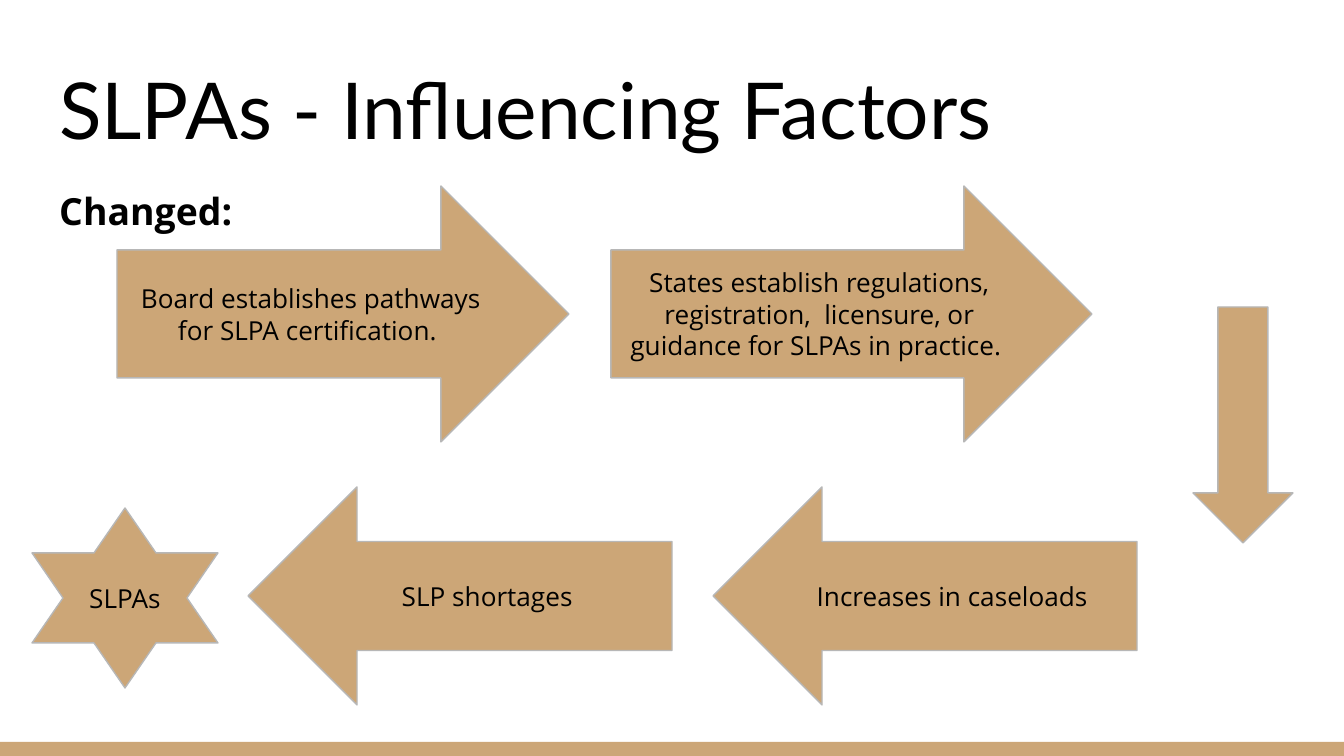
from dataclasses import dataclass

from pptx import Presentation
from pptx import util as u
from pptx.dml.color import RGBColor
from pptx.enum import shapes, text

SCALE = 914400 / 134.4
KIND = shapes.MSO_SHAPE


@dataclass(frozen=True)
class Theme:
    """Colours, fonts and type sizes of the slide."""
    tan: RGBColor = RGBColor.from_string("CCA677")
    edge: RGBColor = RGBColor.from_string("B7B7B7")
    ink: RGBColor = RGBColor.from_string("000000")
    head: str = "Lato"
    body: str = "Open Sans"
    title: int = 42
    lead: int = 20
    label: int = 14


THEME = Theme()


def px(*vals):
    """Turn px lengths into EMU."""
    return [u.Emu(round(v * SCALE)) for v in vals]


def write(shape, words, font, size, anchor, align, bold=False):
    """Set the words of a shape and return its paragraph."""
    frame = shape.text_frame
    frame.word_wrap = True
    frame.vertical_anchor = anchor
    frame.margin_left = frame.margin_right = u.Inches(0.1)
    frame.margin_top = frame.margin_bottom = u.Inches(0.1)
    frame.text = words
    para = frame.paragraphs[0]
    para.alignment = align
    for run in para.runs:
        run.font.name = font
        run.font.size = u.Pt(size)
        run.font.bold = bold
        run.font.color.rgb = THEME.ink
    return para


def add_text(slide, box, words, font, size, anchor, bold=False):
    """Add a left-aligned text box and return its paragraph."""
    shape = slide.shapes.add_textbox(*px(*box))
    return write(shape, words, font, size, anchor, text.PP_ALIGN.LEFT, bold)


def add_form(slide, kind, box, words="", edged=True):
    """Add a tan shape, with a centred label if there are words."""
    shape = slide.shapes.add_shape(kind, *px(*box))
    shape.shadow.inherit = False
    shape.fill.solid()
    shape.fill.fore_color.rgb = THEME.tan
    if edged:
        shape.line.color.rgb = THEME.edge
        shape.line.width = u.Pt(0.75)
    else:
        shape.line.fill.background()
    if words:
        write(shape, words, THEME.body, THEME.label,
              text.MSO_ANCHOR.MIDDLE, text.PP_ALIGN.CENTER)


def main():
    """Build the slide and save it."""
    deck = Presentation()
    deck.slide_width, deck.slide_height = px(1344, 756)
    slide = deck.slides.add_slide(deck.slide_layouts[6])

    add_form(slide, KIND.RECTANGLE, (0, 742, 1344, 14), edged=False)
    add_text(slide, (46, 47, 1252, 122), "SLPAs - Influencing Factors",
             THEME.head, THEME.title, text.MSO_ANCHOR.BOTTOM)
    lead = add_text(slide, (46, 168, 1252, 536), "Changed:",
                    THEME.body, THEME.lead, text.MSO_ANCHOR.TOP, bold=True)
    lead.line_spacing = 1.15
    lead.space_after = u.Pt(12)

    steps = [
        (KIND.RIGHT_ARROW, (117, 186, 452, 256),
         "Board establishes pathways for SLPA certification. "),
        (KIND.RIGHT_ARROW, (611, 186, 481, 256),
         "States establish regulations, registration,  licensure, "
         "or guidance for SLPAs in practice. "),
        (KIND.DOWN_ARROW, (1193, 307, 100, 236), ""),
        (KIND.LEFT_ARROW, (248, 487, 424, 218), "SLP shortages"),
        (KIND.LEFT_ARROW, (713, 487, 424, 218), "Increases in caseloads"),
        (KIND.STAR_6_POINT, (32, 508, 186, 180), "SLPAs"),
    ]
    for kind, box, words in steps:
        add_form(slide, kind, box, words)
    deck.save("out.pptx")


if __name__ == "__main__":
    main()
